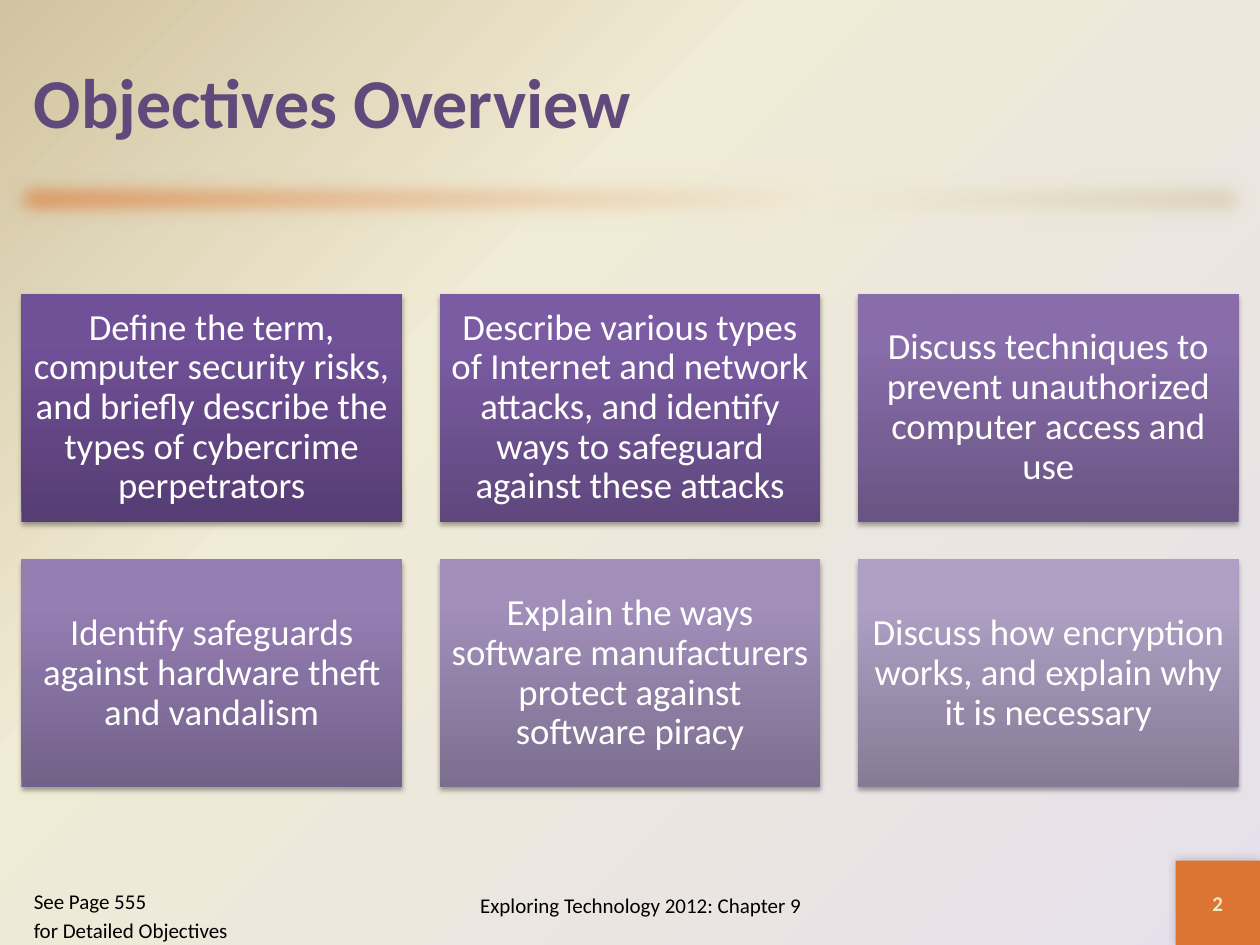
import pptx
import pptx.dml.color
import pptx.enum.shapes
import pptx.enum.text
import pptx.oxml
import pptx.oxml.ns
import pptx.util

Inches = pptx.util.Inches
Pt = pptx.util.Pt
color = pptx.dml.color.RGBColor.from_string
qn = pptx.oxml.ns.qn
NAMESPACE = pptx.oxml.ns.nsdecls("a")
RECTANGLE = pptx.enum.shapes.MSO_SHAPE.RECTANGLE
ALIGN = pptx.enum.text.PP_ALIGN
ANCHOR = pptx.enum.text.MSO_ANCHOR


def set_gradient(owner, stops, direction):
    """Fill a shape or background with (percent, colour) stops; direction is the a:lin or a:path XML."""
    owner.fill.gradient()
    old = slide.element.findall(".//" + qn("a:gradFill"))[-1]
    stop_xml = "".join(
        f'<a:gs pos="{percent * 1000}"><a:srgbClr val="{value}"/></a:gs>' for percent, value in stops
    )
    new = pptx.oxml.parse_xml(
        f'<a:gradFill {NAMESPACE} rotWithShape="1"><a:gsLst>{stop_xml}</a:gsLst>{direction}</a:gradFill>'
    )
    old.getparent().replace(old, new)


def write_text(shape, text, size, fill, bold=False, align=ALIGN.LEFT, anchor=ANCHOR.MIDDLE,
               inset=None, line_spacing=None, space_before=0):
    """Write one paragraph for each line of the text."""
    frame = shape.text_frame
    frame.word_wrap = True
    frame.vertical_anchor = anchor
    if inset is not None:
        frame.margin_left = frame.margin_right = Inches(inset)
        frame.margin_top = frame.margin_bottom = Inches(inset)
    frame.text = text
    for paragraph in frame.paragraphs:
        paragraph.alignment = align
        paragraph.line_spacing = line_spacing
        paragraph.space_before = Pt(space_before)
        paragraph.font.name = "Calibri"
        paragraph.font.size = Pt(size)
        paragraph.font.bold = bold
        paragraph.font.color.rgb = color(fill)


presentation = pptx.Presentation()
presentation.slide_width = Inches(10)
presentation.slide_height = Inches(7.5)
slide = presentation.slides.add_slide(presentation.slide_layouts[6])
shapes = slide.shapes

set_gradient(
    slide.background,
    [(0, "E6E0EC"), (65, "F0EBD5"), (100, "D1C39F")],
    '<a:path path="circle"><a:fillToRect l="100000" t="100000"/></a:path>',
)

# Soft bar under the title
bar = shapes.add_shape(RECTANGLE, 0, Inches(1.33), Inches(10), Inches(0.5))
set_gradient(bar, [(0, "DB7531"), (65, "F0EBD5"), (100, "D1C39F")], '<a:lin ang="2700000" scaled="0"/>')
bar.line.fill.background()
bar.shadow.inherit = False
bar.element.spPr.find(qn("a:effectLst")).append(
    pptx.oxml.parse_xml(f'<a:softEdge {NAMESPACE} rad="{Pt(12.5)}"/>')
)

title = shapes.add_textbox(Inches(0.17), Inches(0.17), Inches(9.67), Inches(1.25))
write_text(title, "Objectives Overview", 40, "604A7B", bold=True)

# Objective tiles: text, then gradient colours from bottom to top
objectives = [
    ("Define the term, computer security risks, and briefly describe the types of cybercrime perpetrators",
     "563D74", "705097", "704F99"),
    ("Describe various types of Internet and network attacks, and identify ways to safeguard against these attacks",
     "5F477D", "7B5CA3", "7C5BA5"),
    ("Discuss techniques to prevent unauthorized computer access and use",
     "695483", "886DAA", "886DAC"),
    ("Identify safeguards against hardware theft and vandalism",
     "726189", "947EB2", "957EB4"),
    ("Explain the ways software manufacturers protect against software piracy",
     "7C6E8F", "A18FBA", "A18FBC"),
    ("Discuss how encryption works, and explain why it is necessary",
     "867B96", "AE9FC3", "AE9FC4"),
]
tile_width, tile_height, gap = 3.02, 1.81, 0.3
shadowed = []
for index, (objective, *colors) in enumerate(objectives):
    row, column = divmod(index, 3)
    tile = shapes.add_shape(
        RECTANGLE,
        Inches(0.17 + column * (tile_width + gap)),
        Inches(2.33 + row * (tile_height + gap)),
        Inches(tile_width),
        Inches(tile_height),
    )
    set_gradient(tile, zip((0, 80, 100), colors), '<a:lin ang="16200000" scaled="0"/>')
    write_text(tile, objective, 21, "FFFFFF", align=ALIGN.CENTER, inset=0.09, line_spacing=0.9)
    shadowed.append((tile, 35, 3.1, 1.8, 90))

footer = shapes.add_textbox(Inches(3), Inches(6.91), Inches(4.17), Inches(0.55))
write_text(footer, "Exploring Technology 2012: Chapter 9", 12, "000000", align=ALIGN.CENTER)

page_number = shapes.add_shape(RECTANGLE, Inches(9.33), Inches(6.83), Inches(0.67), Inches(0.67))
page_number.fill.solid()
page_number.fill.fore_color.rgb = color("DB7531")
write_text(page_number, "2", 12, "EEEBCA", bold=True, align=ALIGN.CENTER)
shadowed.append((page_number, 20, 6, 0, 225))

page_reference = shapes.add_textbox(Inches(0.17), Inches(7), Inches(1.83), Inches(0.5))
write_text(page_reference, "See Page 555\nfor Detailed Objectives", 12, "000000",
           anchor=ANCHOR.TOP, space_before=2.4)

for shape, opacity, blur, distance, angle in shadowed:
    shape.line.fill.background()
    shape.shadow.inherit = False
    shape.element.spPr.find(qn("a:effectLst")).append(pptx.oxml.parse_xml(
        f'<a:outerShdw {NAMESPACE} blurRad="{Pt(blur)}" dist="{Pt(distance)}" dir="{angle * 60000}"'
        f' rotWithShape="0"><a:srgbClr val="000000"><a:alpha val="{opacity * 1000}"/></a:srgbClr></a:outerShdw>'
    ))

presentation.save("out.pptx")
